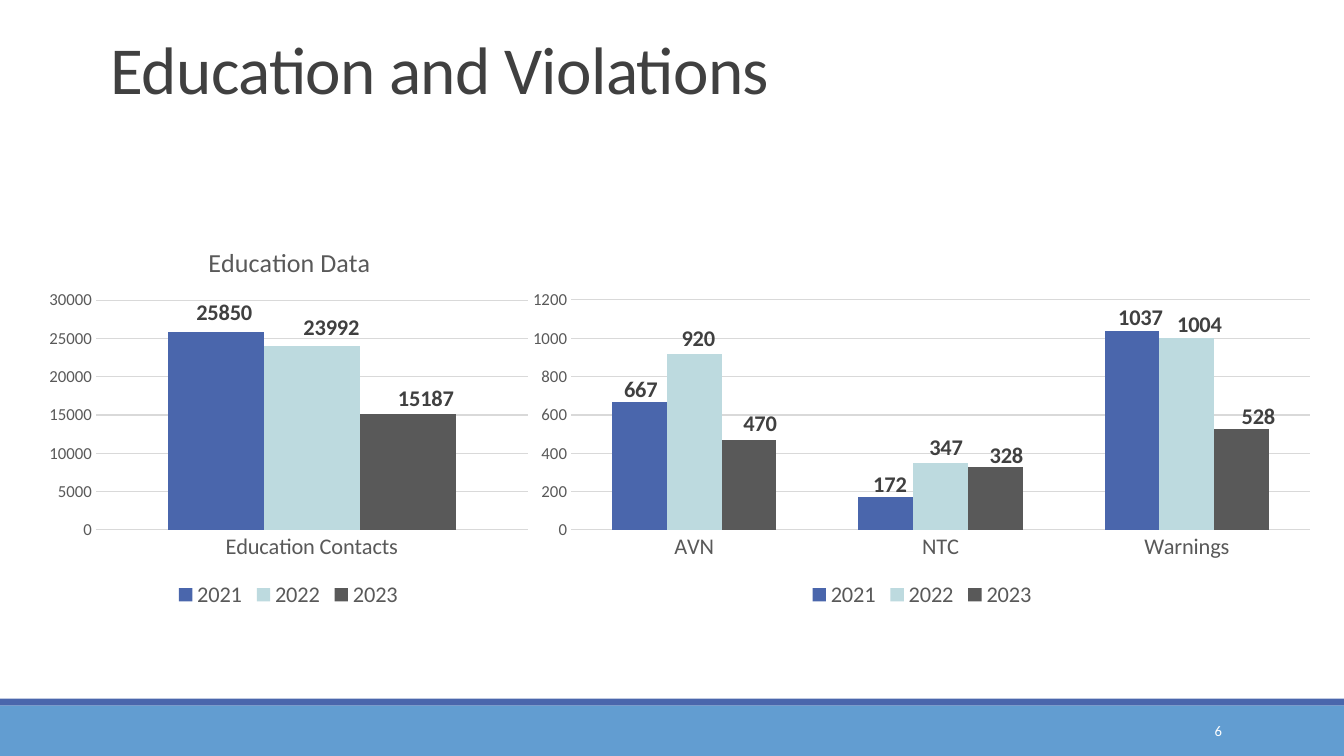
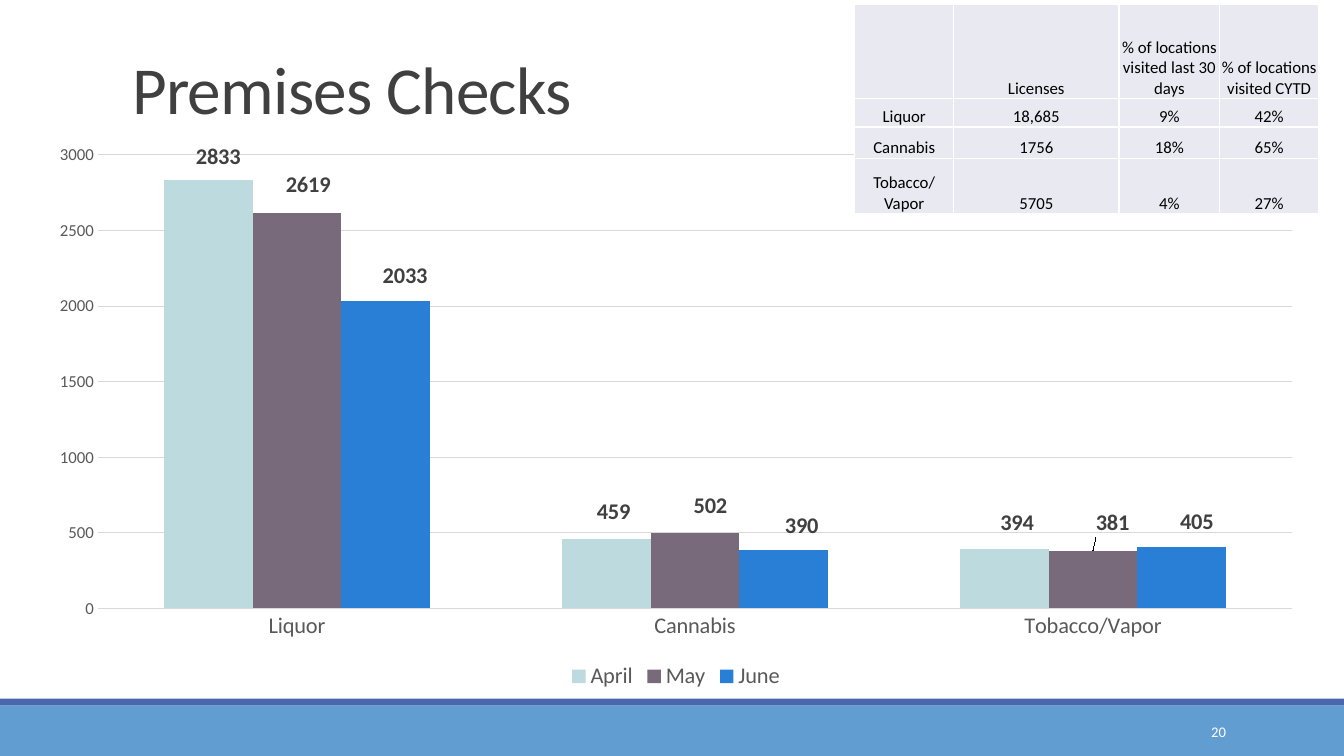
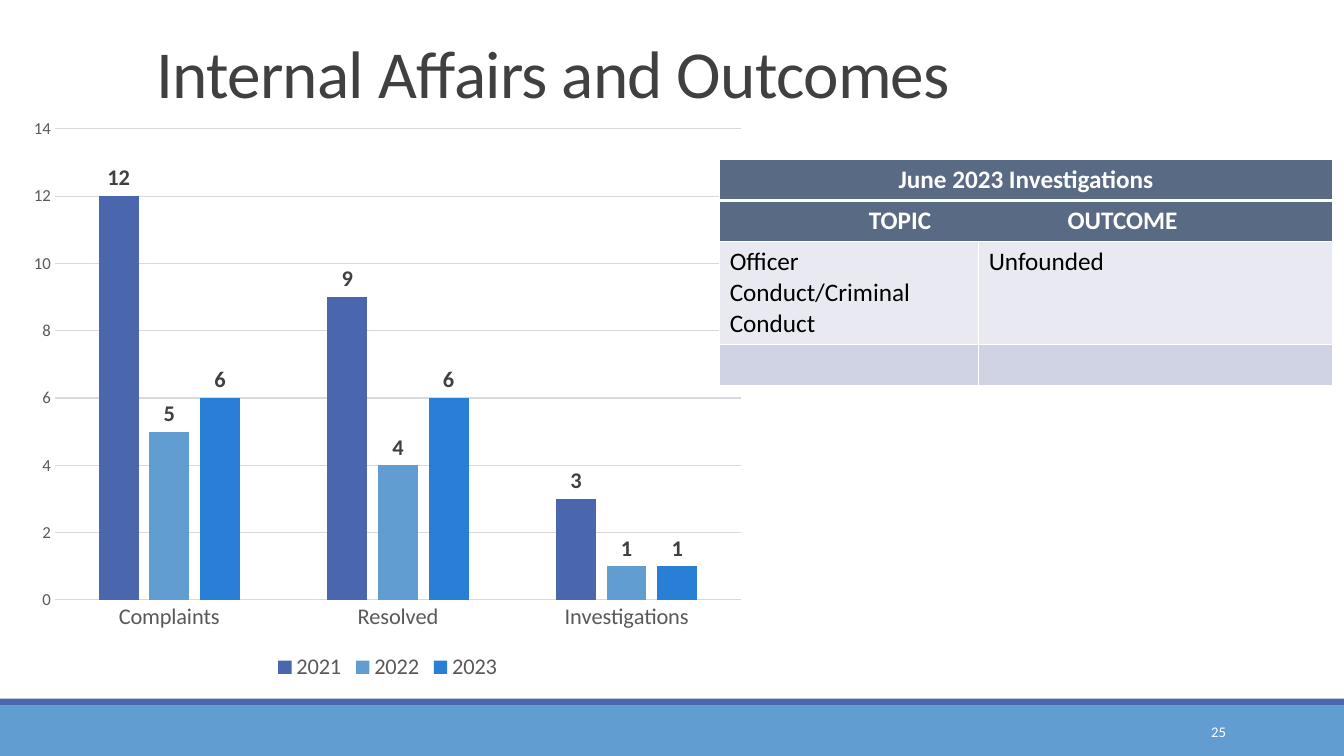
"""Build three enforcement report slides with charts and tables."""
from lxml.etree import SubElement
from pptx import Presentation
from pptx.chart.data import CategoryChartData
from pptx.dml.color import RGBColor
from pptx.enum.chart import XL_CHART_TYPE, XL_LABEL_POSITION, XL_LEGEND_POSITION, XL_TICK_MARK
from pptx.enum.shapes import MSO_SHAPE
from pptx.enum.text import MSO_ANCHOR, MSO_AUTO_SIZE, PP_ALIGN
from pptx.oxml import parse_xml
from pptx.oxml.ns import nsdecls, qn
from pptx.util import Pt

FONT = "Calibri"
WIDTH, HEIGHT = 960, 540
INDIGO, SKY, BLUE, AQUA, MAUVE = "4A66AC", "629DD1", "297FD5", "BDDADF", "78697B"
WHITE, BLACK, DARK, GREY, RULE = "FFFFFF", "000000", "404040", "595959", "D9D9D9"
HEADER, PALE, PALE_ALT = "596A85", "E9EAF1", "D0D3E3"
BANDS = [(504, 36, SKY), (499, 5, INDIGO)]

SLIDES = [
    {
        "title": "Education and Violations", "title_box": (72, 22.3, 792, 58.3),
        "number": "6", "number_at": (776.9, 507.6),
        "charts": [
            {
                "box": (28.1, 157, 355.7, 280.8), "plot": (68.5, 214.3, 308.5, 164.3),
                "title": "Education Data", "title_at": (0.33, 0.05),
                "axis": (30000, 5000), "gap": 150, "overlap": 0,
                "cats": ["Education Contacts"],
                "series": [
                    ("2021", INDIGO, [25850], [(6, -1)]),
                    ("2022", AQUA, [23992], [(14, 0)]),
                    ("2023", GREY, [15187], [(13, 2)]),
                ],
            },
            {
                "box": (369.4, 157, 578.2, 280.8), "plot": (407.9, 214.3, 527.9, 164.3),
                "axis": (1200, 200), "gap": 150, "overlap": 0,
                "cats": ["AVN", "NTC", "Warnings"],
                "series": [
                    ("2021", INDIGO, [667, 172, 1037], [(1, 4), (3, 4), (6, 3)]),
                    ("2022", AQUA, [920, 347, 1004], [(3, 2), (4, 2), (9, 4)]),
                    ("2023", GREY, [470, 328, 528], [(8, 1), (8, 5), (12, 4)]),
                ],
            },
        ],
    },
    {
        "title": "Premises Checks", "title_box": (87.1, 25.2, 792, 69.8),
        "number": "20", "number_at": (779.8, 508.3),
        "charts": [{
            "box": (24.5, 95.8, 916.6, 400.3), "plot": (70, 110.7, 853, 324),
            "axis": (3000, 500), "gap": 150, "overlap": 0,
            "cats": ["Liquor", "Cannabis", "Tobacco/Vapor"],
            "series": [
                ("April", AQUA, [2833, 459, 394], [(7, -4), (5, -7), (9, -6)]),
                ("May", MAUVE, [2619, 502, 381], [(8, -7), (11, -6), (14, -7)]),
                ("June", BLUE, [2033, 390, 405], [(14, -5), (13, -4), (11, -5)]),
            ],
        }],
        "table": {
            "at": (610.6, 2.9), "cols": [70.6, 118.1, 72, 70.6], "rows": [67.7, 20.2, 22.3, 39.6],
            "size": 12, "align": PP_ALIGN.CENTER, "anchor": MSO_ANCHOR.BOTTOM,
            "insets": (0.7, 0.7, 0.7, 0), "headers": 0, "fills": [PALE] * 4,
            "cells": [
                ["", "Licenses", "% of locations visited last 30 days", "% of locations visited CYTD"],
                ["Liquor", "18,685", "9%", "42%"],
                ["Cannabis", "1756", "18%", "65%"],
                ["Tobacco/\nVapor", "5705", "4%", "27%"],
            ],
        },
    },
    {
        "title": "Internal Affairs and Outcomes", "title_box": (104.4, 13.7, 661.7, 69.8),
        "number": "25", "number_at": (779.8, 508.3),
        "charts": [{
            "box": (13.7, 76.3, 526.3, 413.3), "plot": (39.3, 92.1, 490, 336.5),
            "axis": (14, 2), "gap": 219, "overlap": -27,
            "cats": ["Complaints", "Resolved", "Investigations"],
            "series": [
                ("2021", INDIGO, [12, 9, 3], []),
                ("2022", SKY, [5, 4, 1], []),
                ("2023", BLUE, [6, 6, 1], []),
            ],
        }],
        "table": {
            "at": (514.1, 113.8), "cols": [185, 252.7], "rows": [29.5, 29.5, 73.4, 29.5],
            "size": 18, "align": PP_ALIGN.LEFT, "anchor": MSO_ANCHOR.TOP,
            "insets": (7.2, 3.6, 7.2, 3.6), "headers": 2,
            "fills": [HEADER, HEADER, PALE, PALE_ALT],
            "cells": [
                ["June 2023 Investigations", ""],
                ["TOPIC\tOUTCOME", ""],
                ["Officer Conduct/Criminal Conduct", "Unfounded"],
                ["", ""],
            ],
            "tabbed": (1, 106.5, 142),
        },
    },
]


def rgb(value):
    return RGBColor.from_string(value)


def pts(values):
    return [Pt(v) for v in values]


def style(font, size, color, bold=False):
    font.name, font.size, font.bold = FONT, Pt(size), bold
    font.color.rgb = rgb(color)


def set_layout(before, values, inner=False):
    target = '<c:layoutTarget val="inner"/><c:xMode val="edge"/><c:yMode val="edge"/>' if inner else ""
    marks = "".join(f'<c:{k} val="{v:.4f}"/>' for k, v in zip("xywh", values))
    before.addnext(parse_xml(f'<c:layout {nsdecls("c")}><c:manualLayout>{target}{marks}'
                             '</c:manualLayout></c:layout>'))


def add_bands(slide, layout):
    for top, height, color in BANDS:
        sp = slide.shapes.add_shape(MSO_SHAPE.RECTANGLE, *pts((0, top, WIDTH, height)))
        sp.shadow.inherit = False
        sp.fill.solid()
        sp.fill.fore_color.rgb = rgb(color)
        sp.line.fill.background()
        layout.shapes[0].element.addprevious(sp.element)


def set_title(slide, text, box):
    sp = slide.shapes.title
    sp.left, sp.top, sp.width, sp.height = pts(box)
    tf = sp.text_frame
    tf.text = text
    tf.auto_size, tf.vertical_anchor = MSO_AUTO_SIZE.NONE, MSO_ANCHOR.BOTTOM
    p = tf.paragraphs[0]
    p.alignment, p.line_spacing = PP_ALIGN.LEFT, 0.85
    style(p.runs[0].font, 48, DARK)
    for props in sp.element.iter(qn("a:rPr")):
        props.set("spc", "-50")


def add_number(slide, text, at):
    tf = slide.shapes.add_textbox(*pts((*at, 103, 28.8))).text_frame
    tf.word_wrap, tf.vertical_anchor = True, MSO_ANCHOR.MIDDLE
    tf.text = text
    p = tf.paragraphs[0]
    p.alignment = PP_ALIGN.RIGHT
    style(p.runs[0].font, 10.5, WHITE)


def style_axes(chart, top, step):
    for axis, size in ((chart.category_axis, 16), (chart.value_axis, 12)):
        axis.major_tick_mark = axis.minor_tick_mark = XL_TICK_MARK.NONE
        style(axis.tick_labels.font, size, GREY)
    values = chart.value_axis
    values.minimum_scale, values.maximum_scale, values.major_unit = 0, top, step
    values.format.line.fill.background()
    for line in (chart.category_axis.format.line, values.major_gridlines.format.line):
        line.color.rgb, line.width = rgb(RULE), Pt(0.75)


def style_labels(labels):
    style(labels.font, 16, DARK, True)
    labels.position = XL_LABEL_POSITION.OUTSIDE_END


def add_column_chart(slide, spec_data):
    data = CategoryChartData()
    data.categories = spec_data["cats"]
    for name, _, values, _ in spec_data["series"]:
        data.add_series(name, values)
    left, top, width, height = spec_data["box"]
    chart = slide.shapes.add_chart(XL_CHART_TYPE.COLUMN_CLUSTERED, *pts(spec_data["box"]), data).chart
    style(chart.font, 10, BLACK)
    chart.has_title = "title" in spec_data
    if chart.has_title:
        tf = chart.chart_title.text_frame
        tf.text = spec_data["title"]
        style(tf.paragraphs[0].runs[0].font, 18.6, GREY)
        chart.chart_title.include_in_layout = False
        for old in chart.element.xpath("//c:title/c:layout"):
            old.getparent().remove(old)
        set_layout(chart.element.xpath("//c:title/c:tx")[0], spec_data["title_at"])
        mode = chart.element.xpath("//c:title//c:manualLayout")[0]
        for i, tag in enumerate(("c:xMode", "c:yMode")):
            mark = SubElement(mode, qn(tag))
            mark.set("val", "edge")
            mode.insert(i, mark)
    style_axes(chart, *spec_data["axis"])
    chart.has_legend = True
    chart.legend.position, chart.legend.include_in_layout = XL_LEGEND_POSITION.BOTTOM, False
    style(chart.legend.font, 16, GREY)

    plot = chart.plots[0]
    plot.gap_width, plot.overlap, plot.vary_by_categories = spec_data["gap"], spec_data["overlap"], False
    shifts = []
    for series, (_, color, _, offsets) in zip(plot.series, spec_data["series"]):
        series.format.fill.solid()
        series.format.fill.fore_color.rgb = rgb(color)
        series.data_labels.show_value = True
        style_labels(series.data_labels)
        for i, _ in enumerate(offsets):
            style_labels(series.points[i].data_label)
        shifts += offsets
    for label, (dx, dy) in zip(chart.element.xpath("//c:dLbl"), shifts):
        set_layout(label.find(qn("c:idx")), (dx / width, dy / height))

    area = chart.element.xpath("//c:plotArea")[0]
    for old in area.findall(qn("c:layout")):
        area.remove(old)
    x, y, w, h = spec_data["plot"]
    set_layout(area[0], ((x - left) / width, (y - top) / height, w / width, h / height), True)
    area.insert(0, area.find(qn("c:layout")))


def set_borders(cell, bottom):
    props = cell._tc.get_or_add_tcPr()
    for side, width in (("L", 1), ("R", 1), ("T", 1), ("B", bottom)):
        ln = SubElement(props, qn(f"a:ln{side}"), w=str(Pt(width)))
        SubElement(SubElement(ln, qn("a:solidFill")), qn("a:srgbClr"), val=WHITE)


def add_grid(slide, grid):
    cols, rows, headers = grid["cols"], grid["rows"], grid["headers"]
    table = slide.shapes.add_table(len(rows), len(cols),
                                   *pts((*grid["at"], sum(cols), sum(rows)))).table
    table.first_row = table.horz_banding = False
    for col, width in zip(table.columns, cols):
        col.width = Pt(width)
    for r, (row, height) in enumerate(zip(table.rows, rows)):
        row.height = Pt(height)
        is_header = r < headers
        for cell, text in zip(row.cells, grid["cells"][r]):
            set_borders(cell, 3 if is_header and r == 0 else 1)
            cell.fill.solid()
            cell.fill.fore_color.rgb = rgb(grid["fills"][r])
            cell.margin_left, cell.margin_top, cell.margin_right, cell.margin_bottom = pts(grid["insets"])
            cell.vertical_anchor = grid["anchor"]
            cell.text_frame.text = text
            for p in cell.text_frame.paragraphs:
                p.alignment = PP_ALIGN.CENTER if is_header else grid["align"]
                style(p.font, grid["size"], BLACK)
                for run in p.runs:
                    style(run.font, grid["size"], WHITE if is_header else BLACK, is_header)
        if is_header:
            table.cell(r, 0).merge(table.cell(r, len(cols) - 1))
    if "tabbed" in grid:
        r, indent, stop = grid["tabbed"]
        cell = table.cell(r, 0)
        cell.margin_left = Pt(indent)
        p = cell.text_frame.paragraphs[0]
        p.alignment = PP_ALIGN.LEFT
        props = p._p.get_or_add_pPr()
        tabs = parse_xml(f'<a:tabLst {nsdecls("a")}><a:tab pos="{Pt(stop)}" algn="l"/></a:tabLst>')
        props.insert(0, tabs)


def main():
    prs = Presentation()
    prs.slide_width, prs.slide_height = Pt(WIDTH), Pt(HEIGHT)
    layout = prs.slide_layouts[5]
    for i, content in enumerate(SLIDES):
        slide = prs.slides.add_slide(layout)
        if i == 0:
            add_bands(slide, layout)
        set_title(slide, content["title"], content["title_box"])
        for chart in content["charts"]:
            add_column_chart(slide, chart)
        if "table" in content:
            add_grid(slide, content["table"])
        add_number(slide, content["number"], content["number_at"])
    prs.save("out.pptx")


if __name__ == "__main__":
    main()
